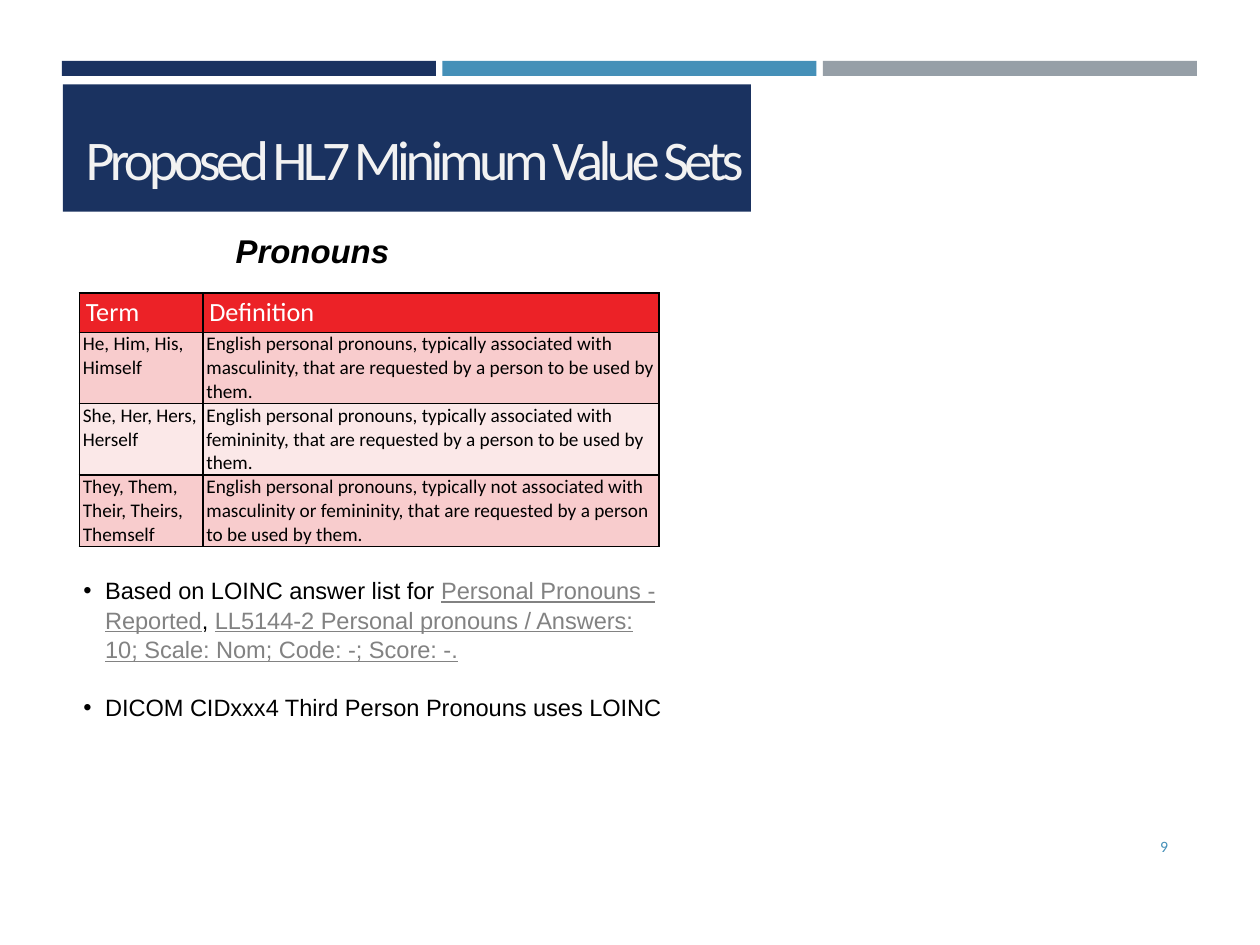
import pptx
import pptx.dml.color
import pptx.enum.shapes
import pptx.enum.text
import pptx.oxml
import pptx.oxml.ns
import pptx.util
from pptx.util import Cm

COLORS = {
    "navy": "1A3260", "blue": "4590B8", "gray": "969FA7", "title": "F2F2F2",
    "header": "EC2227", "odd": "F8CCCD", "even": "FBE8E8",
    "white": "FFFFFF", "black": "000000", "link": "828282",
}
ROWS = [
    ("Term", "Definition"),
    ("He, Him, His, Himself",
     "English personal pronouns, typically associated with masculinity, "
     "that are requested by a person to be used by them."),
    ("She, Her, Hers, Herself",
     "English personal pronouns, typically associated with femininity, "
     "that are requested by a person to be used by them."),
    ("They, Them, Their, Theirs, Themself",
     "English personal pronouns, typically not associated with masculinity or femininity, "
     "that are requested by a person to be used by them."),
]
BULLETS = [
    [("Based on LOINC answer list for ", False), ("Personal Pronouns - Reported", True),
     (", ", False),
     ("LL5144-2 Personal pronouns / Answers: 10; Scale: Nom; Code: -; Score: -.", True)],
    [("DICOM CIDxxx4 Third Person Pronouns uses LOINC", False)],
]
ANCHOR = pptx.enum.text.MSO_ANCHOR
ALIGN = pptx.enum.text.PP_ALIGN


class SlideBuilder:
    """Holds the style and the current slide, and adds each kind of element."""

    def __init__(self, presentation):
        self.slide = presentation.slides.add_slide(presentation.slide_layouts[1])
        self.shapes = self.slide.shapes

    def color(self, name):
        return pptx.dml.color.RGBColor.from_string(COLORS[name])

    def style(self, font, name, size, color):
        font.name = name
        font.size = pptx.util.Pt(size)
        font.color.rgb = self.color(color)

    def xml(self, parent, tag, **attributes):
        element = pptx.oxml.parse_xml(f"<{tag} {pptx.oxml.ns.nsdecls('a')}/>")
        for key, value in attributes.items():
            element.set(key, str(value))
        parent.append(element)
        return element

    def frame(self, shape, anchor, inset=None):
        frame = shape.text_frame
        frame.word_wrap = True
        frame.auto_size = pptx.enum.text.MSO_AUTO_SIZE.NONE
        frame.vertical_anchor = anchor
        if inset is not None:
            frame.margin_left = frame.margin_right = Cm(inset)
            frame.margin_top = frame.margin_bottom = Cm(inset)
        return frame

    def place(self, shape, left, top, width, height):
        shape.left, shape.top = Cm(left), Cm(top)
        shape.width, shape.height = Cm(width), Cm(height)
        self.shapes.element.append(shape.element)

    def bar(self, left, top, width, height, color):
        shape = self.shapes.add_shape(
            pptx.enum.shapes.MSO_SHAPE.RECTANGLE, Cm(left), Cm(top), Cm(width), Cm(height))
        shape.shadow.inherit = False
        shape.fill.solid()
        shape.fill.fore_color.rgb = self.color(color)
        shape.line.fill.background()

    def title(self, text, *box):
        shape = self.shapes.title
        self.place(shape, *box)
        paragraph = self.frame(shape, ANCHOR.BOTTOM).paragraphs[0]
        run = paragraph.add_run()
        run.text = text
        paragraph.alignment = ALIGN.LEFT
        paragraph.line_spacing = 0.9
        self.style(paragraph.font, "Calibri", 32, "title")
        run.font._element.set("spc", "-260")

    def text(self, text, box, name, size, color, align=ALIGN.LEFT, inset=None, strong=None):
        shape = self.shapes.add_textbox(*map(Cm, box))
        paragraph = self.frame(shape, ANCHOR.MIDDLE, inset).paragraphs[0]
        paragraph.text = text
        paragraph.alignment = align
        self.style(paragraph.font, name, size, color)
        paragraph.font.bold = paragraph.font.italic = strong

    def cell(self, cell, text, size, color, fill, insets):
        cell.text = text
        cell.margin_left = cell.margin_right = Cm(insets[0])
        cell.margin_top = cell.margin_bottom = Cm(insets[1])
        self.style(cell.text_frame.paragraphs[0].font, "Calibri", size, color)
        properties = cell._tc.get_or_add_tcPr()
        for side in ("a:lnL", "a:lnR", "a:lnT", "a:lnB"):
            line = self.xml(properties, side, w=pptx.util.Pt(1))
            self.xml(self.xml(line, "a:solidFill"), "a:srgbClr", val=COLORS["black"])
        cell.fill.solid()
        cell.fill.fore_color.rgb = self.color(fill)

    def table(self, rows, left, top, widths, heights):
        table = self.shapes.add_table(
            len(rows), len(widths), Cm(left), Cm(top), Cm(sum(widths)), Cm(sum(heights))).table
        table.first_row = table.horz_banding = False
        for column, width in zip(table.columns, widths):
            column.width = Cm(width)
        for index, (row, height) in enumerate(zip(rows, heights)):
            table.rows[index].height = Cm(height)
            if index == 0:
                look = (15, "white", "header", (0.13, 0.07))
            else:
                look = (11, "black", "odd" if index % 2 else "even", (0.07, 0))
            for column, text in enumerate(row):
                self.cell(table.cell(index, column), text, *look)

    def bullets(self, items, *box):
        shape = self.slide.placeholders[1]
        self.place(shape, *box)
        frame = self.frame(shape, ANCHOR.MIDDLE, 0.05)
        for index, runs in enumerate(items):
            paragraph = frame.add_paragraph() if index else frame.paragraphs[0]
            paragraph.line_spacing = 1.05
            paragraph.space_before = pptx.util.Pt(16 if index else 0)
            properties = paragraph._p.get_or_add_pPr()
            properties.set("marL", str(Cm(0.44)))
            properties.set("indent", str(-Cm(0.44)))
            self.xml(self.xml(properties, "a:buClr"), "a:srgbClr", val=COLORS["black"])
            self.xml(properties, "a:buFont", typeface="Arial")
            self.xml(properties, "a:buChar", char="•")
            self.style(paragraph.font, "Arial", 13.5, "black")
            for text, linked in runs:
                run = paragraph.add_run()
                run.text = text
                if linked:
                    run.font.color.rgb = self.color("link")
                    run.font.underline = True


def main():
    presentation = pptx.Presentation()
    presentation.slide_width, presentation.slide_height = Cm(25.4), Cm(19.05)
    builder = SlideBuilder(presentation)
    for index, color in enumerate(("navy", "blue", "gray")):
        builder.bar(1.25 + 7.67 * index, 1.23, 7.54, 0.3, color)
    builder.bar(1.27, 1.7, 13.87, 2.57, "navy")
    builder.title("Proposed HL7 Minimum Value Sets", 1.47, 1.7, 22.2, 2.31)
    builder.text("9", (21.67, 16.54, 2.13, 1.02), "Calibri", 9, "blue", ALIGN.RIGHT)
    builder.table(ROWS, 1.6, 5.91, (2.49, 9.2), (0.77, 1.44, 1.44, 1.44))
    builder.text("Pronouns", (4.7, 4.6, 9.14, 0.91), "Arial", 18.8, "black",
                 inset=0.05, strong=True)
    builder.bullets(BULLETS, 1.63, 11.56, 11.94, 3)
    presentation.save("out.pptx")


if __name__ == "__main__":
    main()
